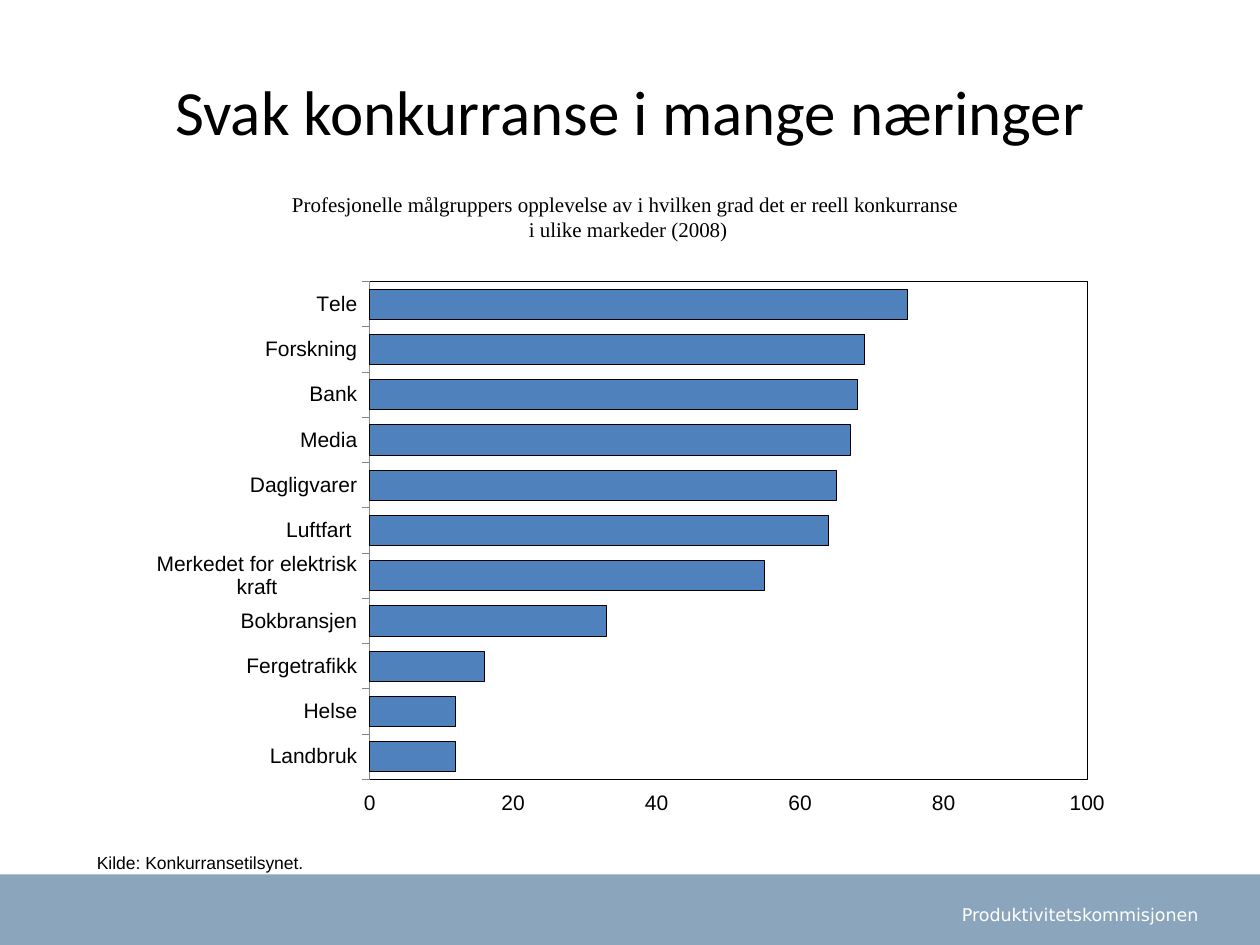
from lxml import etree
from pptx import Presentation
from pptx.chart.data import CategoryChartData as Data
from pptx.dml.color import RGBColor as Rgb
from pptx.enum.chart import XL_CHART_TYPE as Kind, XL_TICK_LABEL_POSITION as Label, XL_TICK_MARK as Tick
from pptx.enum.shapes import MSO_SHAPE as Shape
from pptx.enum.text import MSO_ANCHOR as Anchor, PP_ALIGN as Align
from pptx.oxml import parse_xml
from pptx.oxml.ns import nsdecls, qn
from pptx.util import Inches, Pt

HUES = {"band": "8BA5BC", "bar": "4F81BD", "ink": "000000", "axis": "868686", "white": "FFFFFF"}
MARKETS = {
    "Landbruk": 12,
    "Helse": 12,
    "Fergetrafikk": 16,
    "Bokbransjen": 33,
    "Merkedet for elektrisk kraft": 55,
    "Luftfart ": 64,
    "Dagligvarer": 65,
    "Media": 67,
    "Bank": 68,
    "Forskning": 69,
    "Tele": 75,
}


def hue(name):
    return Rgb.from_string(HUES[name])


def write(frame, text, size=12, font="Arial", color="ink", align=Align.LEFT):
    for i, line in enumerate(text.split("\n")):
        para = frame.paragraphs[0] if i == 0 else frame.add_paragraph()
        para.alignment = align
        run = para.add_run()
        run.text = line
        run.font.size = Pt(size)
        run.font.name = font
        run.font.color.rgb = hue(color)


class Page:
    def __init__(self, deck):
        self.slide = deck.slides.add_slide(deck.slide_layouts[6])
        self.shapes = self.slide.shapes

    def band(self, box, color):
        rect = self.shapes.add_shape(Shape.RECTANGLE, *map(Inches, box))
        rect.shadow.inherit = False
        rect.fill.solid()
        rect.fill.fore_color.rgb = hue(color)
        rect.line.fill.background()

    def text(self, box, text, wrap=True, anchor=Anchor.TOP, **style):
        frame = self.shapes.add_textbox(*map(Inches, box)).text_frame
        frame.word_wrap = wrap
        frame.vertical_anchor = anchor
        write(frame, text, **style)

    def bars(self, box, points, plot):
        data = Data()
        data.categories = list(points)
        data.add_series("Series 1", list(points.values()))
        chart = self.shapes.add_chart(Kind.BAR_CLUSTERED, *map(Inches, box), data).chart
        chart.has_legend = False
        chart.has_title = False
        chart.font.name = "Arial"
        chart.font.size = Pt(12)
        chart.font.color.rgb = hue("ink")
        body = chart.plots[0]
        body.gap_width = 50
        body.vary_by_categories = False
        form = body.series[0].format
        form.fill.solid()
        form.fill.fore_color.rgb = hue("bar")
        form.line.color.rgb = hue("ink")
        form.line.width = Pt(0.5)
        self.axes(chart)
        self.frame(chart, plot)

    def axes(self, chart):
        cat, val = chart.category_axis, chart.value_axis
        for axis, mark in ((cat, Tick.OUTSIDE), (val, Tick.NONE)):
            axis.has_major_gridlines = False
            axis.major_tick_mark = mark
            axis.minor_tick_mark = Tick.NONE
            axis.tick_label_position = Label.LOW
            axis.format.line.width = Pt(0.5)
        cat.format.line.color.rgb = hue("axis")
        val.format.line.color.rgb = hue("ink")
        val.minimum_scale, val.maximum_scale, val.major_unit = 0, 100, 20
        val.tick_labels.number_format = "#,##0"
        val.tick_labels.number_format_is_linked = False

    def frame(self, chart, plot):
        area = chart._chartSpace.chart.plotArea
        for old in area.findall(qn("c:layout")):
            area.remove(old)
        layout = parse_xml(f"<c:layout {nsdecls('c')}><c:manualLayout/></c:layout>")
        rules = [("layoutTarget", "inner"), ("xMode", "edge"), ("yMode", "edge")]
        rules += zip("xywh", plot)
        for tag, value in rules:
            etree.SubElement(layout[0], qn(f"c:{tag}")).set("val", str(value))
        area.insert(0, layout)
        area.append(parse_xml(
            f"<c:spPr {nsdecls('c', 'a')}><a:noFill/><a:ln w='6350'><a:solidFill>"
            f"<a:srgbClr val='{HUES['ink']}'/></a:solidFill></a:ln></c:spPr>"))


def main():
    deck = Presentation()
    deck.slide_width, deck.slide_height = Inches(10), Inches(7.5)
    page = Page(deck)
    page.band((0, 6.94, 10, 0.59), "band")
    page.text((7.05, 7.12, 2.56, 0.27), "Produktivitetskommisjonen", anchor=Anchor.MIDDLE,
              size=10, font="DejaVu Sans", color="white", align=Align.RIGHT)
    page.text((0.64, 1.47, 8.69, 0.5),
              "Profesjonelle målgruppers opplevelse av i hvilken grad det er reell konkurranse \n"
              "i ulike markeder (2008)", font="Times New Roman", align=Align.CENTER)
    page.text((0.5, 0.53, 9, 0.83), "Svak konkurranse i mange næringer",
              size=36, font="Calibri", align=Align.CENTER)
    page.text((0.67, 6.71, 1.85, 0.27), "Kilde: Konkurransetilsynet.", wrap=False, size=10)
    page.bars((1.14, 2.1, 7.8, 4.49), MARKETS, (0.23, 0.03, 0.73, 0.88))
    deck.save("out.pptx")


if __name__ == "__main__":
    main()
